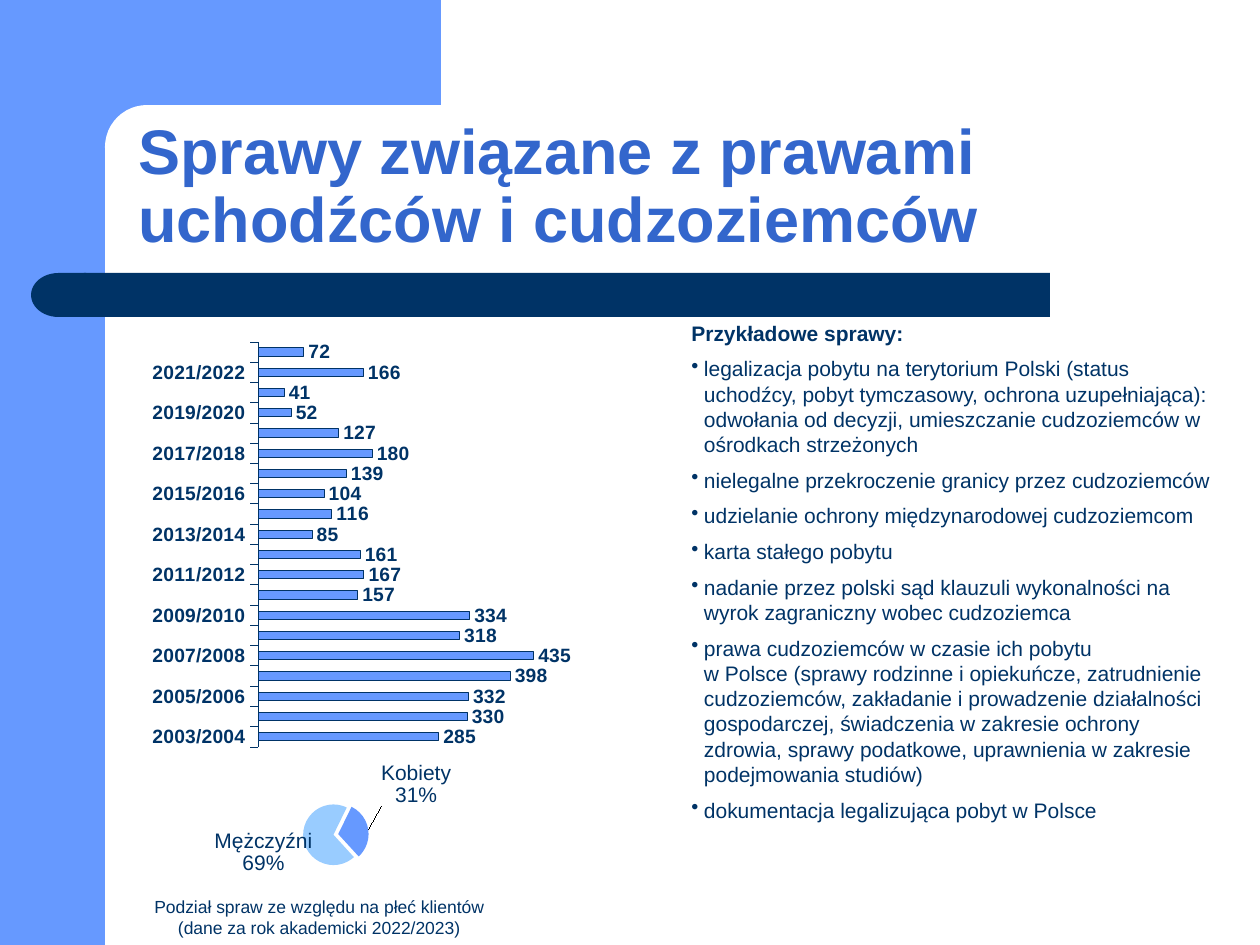
"""Build the slide on refugee and foreigner cases with its two charts."""
import dataclasses

import lxml.etree
import pptx
import pptx.chart.data
import pptx.dml.color
import pptx.enum.chart
import pptx.enum.shapes
import pptx.enum.text
import pptx.oxml.ns
import pptx.util

SHAPES = pptx.enum.shapes.MSO_SHAPE
ALIGN = pptx.enum.text.PP_ALIGN
ANCHOR = pptx.enum.text.MSO_ANCHOR
CHARTS = pptx.enum.chart.XL_CHART_TYPE
LABELS = pptx.enum.chart.XL_LABEL_POSITION


@dataclasses.dataclass(frozen=True)
class Theme:
    font: str = "Arial"
    blue: str = "6699FF"
    sky: str = "99CCFF"
    navy: str = "003366"
    heading: str = "3366CC"
    white: str = "FFFFFF"
    title_size: int = 36
    body_size: int = 12
    chart_size: int = 11
    caption_size: int = 10


def px(length):
    return pptx.util.Emu(round(length * 914400 / 126))


def rgb(color):
    return pptx.dml.color.RGBColor.from_string(color)


def make(tag, **attributes):
    return lxml.etree.Element(pptx.oxml.ns.qn(tag), attributes)


def make_layout(**values):
    layout = make("c:layout")
    manual = make("c:manualLayout")
    layout.append(manual)
    for name, value in values.items():
        manual.append(make(f"c:{name}", val=str(value)))
    return layout


def style_font(font, size, color, bold=False):
    font.name = Theme.font
    font.size = pptx.util.Pt(size)
    font.bold = bold
    font.color.rgb = rgb(color)


def write(para, text, *, size, color=Theme.navy, bold=False, bullet=False,
          align=ALIGN.LEFT, spacing=1.0, before=0):
    para.text = text
    para.alignment = align
    para.line_spacing = spacing
    para.space_before = pptx.util.Pt(before)
    for span in para.runs:
        style_font(span.font, size, color, bold)
    if bullet:
        properties = para._p.get_or_add_pPr()
        indent = pptx.util.Inches(0.1)
        properties.set("marL", str(indent))
        properties.set("indent", str(-indent))
        properties.append(make("a:buChar", char="•"))


class SlideBuilder:
    def __init__(self, page, theme):
        self.page = page
        self.theme = theme

    def shape(self, kind, left, top, width, height, color):
        shape = self.page.shapes.add_shape(
            kind, px(left), px(top), px(width), px(height))
        shape.shadow.inherit = False
        shape.fill.solid()
        shape.fill.fore_color.rgb = rgb(color)
        shape.line.fill.background()
        return shape

    def text(self, left, top, width, height, anchor=ANCHOR.TOP):
        box = self.page.shapes.add_textbox(px(left), px(top), px(width), px(height))
        frame = box.text_frame
        frame.word_wrap = True
        frame.vertical_anchor = anchor
        return frame

    def chart(self, kind, left, top, width, height, data, plot_area, size):
        source = pptx.chart.data.CategoryChartData()
        source.categories = list(data)
        source.add_series("Series 1", list(data.values()))
        chart = self.page.shapes.add_chart(
            kind, px(left), px(top), px(width), px(height), source).chart
        chart.has_legend = False
        chart.has_title = False
        style_font(chart.font, size, self.theme.navy)
        area = chart.element.xpath("c:chart/c:plotArea")[0]
        for layout in area.xpath("c:layout"):
            area.remove(layout)
        x, y, w, h = plot_area
        area.insert(0, make_layout(layoutTarget="inner", xMode="edge",
                                   yMode="edge", x=x, y=y, w=w, h=h))
        return chart

    def bar_chart(self, *frame, data, plot_area, maximum):
        theme = self.theme
        chart = self.chart(CHARTS.BAR_CLUSTERED, *frame, data, plot_area,
                           theme.chart_size)
        axis = chart.category_axis
        style_font(axis.tick_labels.font, theme.chart_size, theme.navy, True)
        axis.format.line.color.rgb = rgb(theme.navy)
        axis.format.line.width = pptx.util.Pt(0.15)
        axis.major_tick_mark = pptx.enum.chart.XL_TICK_MARK.OUTSIDE
        chart.element.xpath("//c:catAx/c:noMultiLvlLbl")[0].addprevious(
            make("c:tickLblSkip", val="1"))
        values = chart.value_axis
        values.visible = False
        values.has_major_gridlines = False
        values.minimum_scale, values.maximum_scale = 0, maximum
        plot = chart.plots[0]
        plot.gap_width = 150
        plot.vary_by_categories = False
        plot.has_data_labels = True
        labels = plot.data_labels
        labels.show_value = True
        labels.position = LABELS.OUTSIDE_END
        style_font(labels.font, theme.chart_size, theme.navy, True)
        bars = plot.series[0].format
        bars.fill.solid()
        bars.fill.fore_color.rgb = rgb(theme.blue)
        bars.line.color.rgb = rgb(theme.navy)
        bars.line.width = pptx.util.Pt(0.25)

    def pie_chart(self, *frame, data, plot_area, colors, offsets, angle, explosion):
        theme = self.theme
        chart = self.chart(CHARTS.PIE, *frame, data, plot_area, theme.body_size)
        plot = chart.plots[0]
        plot.vary_by_categories = True
        chart.element.xpath("//c:ser/c:tx")[0].addnext(
            make("c:explosion", val=str(explosion)))
        pie = chart.element.xpath("//c:pieChart")[0]
        for old in pie.xpath("c:firstSliceAng"):
            pie.remove(old)
        pie.append(make("c:firstSliceAng", val=str(angle)))
        for index, color in enumerate(colors):
            point = plot.series[0].points[index]
            point.format.fill.solid()
            point.format.fill.fore_color.rgb = rgb(color)
            point.format.line.fill.background()
            style_font(point.data_label.font, theme.body_size, theme.navy)
            point.data_label.position = LABELS.OUTSIDE_END
        for label, (x, y) in zip(chart.element.xpath("//c:dLbl"), offsets):
            label.xpath("c:idx")[0].addnext(make_layout(x=x, y=y))
            for name, shown in (("Val", "0"), ("CatName", "1"), ("Percent", "1")):
                label.xpath(f"c:show{name}")[0].set("val", shown)
            separator = make("c:separator")
            separator.text = "\n"
            label.append(separator)


CASES_BY_YEAR = {
    f"{year}/{year + 1}": count for year, count in enumerate(
        [285, 330, 332, 398, 435, 318, 334, 157, 167, 161,
         85, 116, 104, 139, 180, 127, 52, 41, 166, 72], start=2003)}
EXAMPLES = [
    "legalizacja pobytu na terytorium Polski (status uchodźcy, pobyt tymczasowy, ochrona uzupełniająca): odwołania od decyzji, umieszczanie cudzoziemców w ośrodkach strzeżonych",
    "nielegalne przekroczenie granicy przez cudzoziemców",
    "udzielanie ochrony międzynarodowej cudzoziemcom",
    "karta stałego pobytu",
    "nadanie przez polski sąd klauzuli wykonalności na wyrok zagraniczny wobec cudzoziemca",
    "prawa cudzoziemców w czasie ich pobytu \vw Polsce (sprawy rodzinne i opiekuńcze, zatrudnienie cudzoziemców, zakładanie i prowadzenie działalności gospodarczej, świadczenia w zakresie ochrony zdrowia, sprawy podatkowe, uprawnienia w zakresie podejmowania studiów)",
    "dokumentacja legalizująca pobyt w Polsce",
]


def main():
    theme = Theme()
    deck = pptx.Presentation()
    deck.slide_width, deck.slide_height = px(1260), px(945)
    page = deck.slides.add_slide(deck.slide_layouts[6])
    builder = SlideBuilder(page, theme)

    builder.shape(SHAPES.RECTANGLE, 0, 0, 105, 945, theme.blue)
    builder.shape(SHAPES.RECTANGLE, 94, 0, 347, 147, theme.blue)
    panel = builder.shape(SHAPES.ROUNDED_RECTANGLE, 105, 105, 703, 84, theme.white)
    panel.adjustments[0] = 0.5
    builder.shape(SHAPES.RECTANGLE, 84, 273, 966, 44, theme.navy)
    cap = builder.shape(SHAPES.FLOWCHART_DELAY, 31, 273, 55, 44, theme.navy)
    cap.rotation = 180

    title = builder.text(126, 105, 1102, 157, anchor=ANCHOR.BOTTOM)
    write(title.paragraphs[0], "Sprawy związane z prawami uchodźców i cudzoziemców",
          size=theme.title_size, color=theme.heading, bold=True, spacing=0.9)

    examples = builder.text(679, 314, 556, 534)
    write(examples.paragraphs[0], "Przykładowe sprawy:", size=theme.body_size, bold=True)
    for example in EXAMPLES:
        write(examples.add_paragraph(), example, size=theme.body_size,
              bullet=True, before=6)

    builder.bar_chart(105, 304, 546, 471, data=CASES_BY_YEAR,
                      plot_area=(0.28, 0.08, 0.58, 0.86), maximum=500)
    builder.pie_chart(52, 760, 546, 149, data={"Kobiety": 31, "Mężczyźni": 69},
                      plot_area=(0.46, 0.28, 0.12, 0.44),
                      colors=(theme.blue, theme.sky),
                      offsets=((0.01, -0.15), (0.03, -0.07)), angle=26, explosion=8)

    caption = builder.text(123, 890, 392, 55)
    write(caption.paragraphs[0],
          "Podział spraw ze względu na płeć klientów (dane za rok akademicki 2022/2023)",
          size=theme.caption_size, align=ALIGN.CENTER)
    deck.save("out.pptx")


if __name__ == "__main__":
    main()
